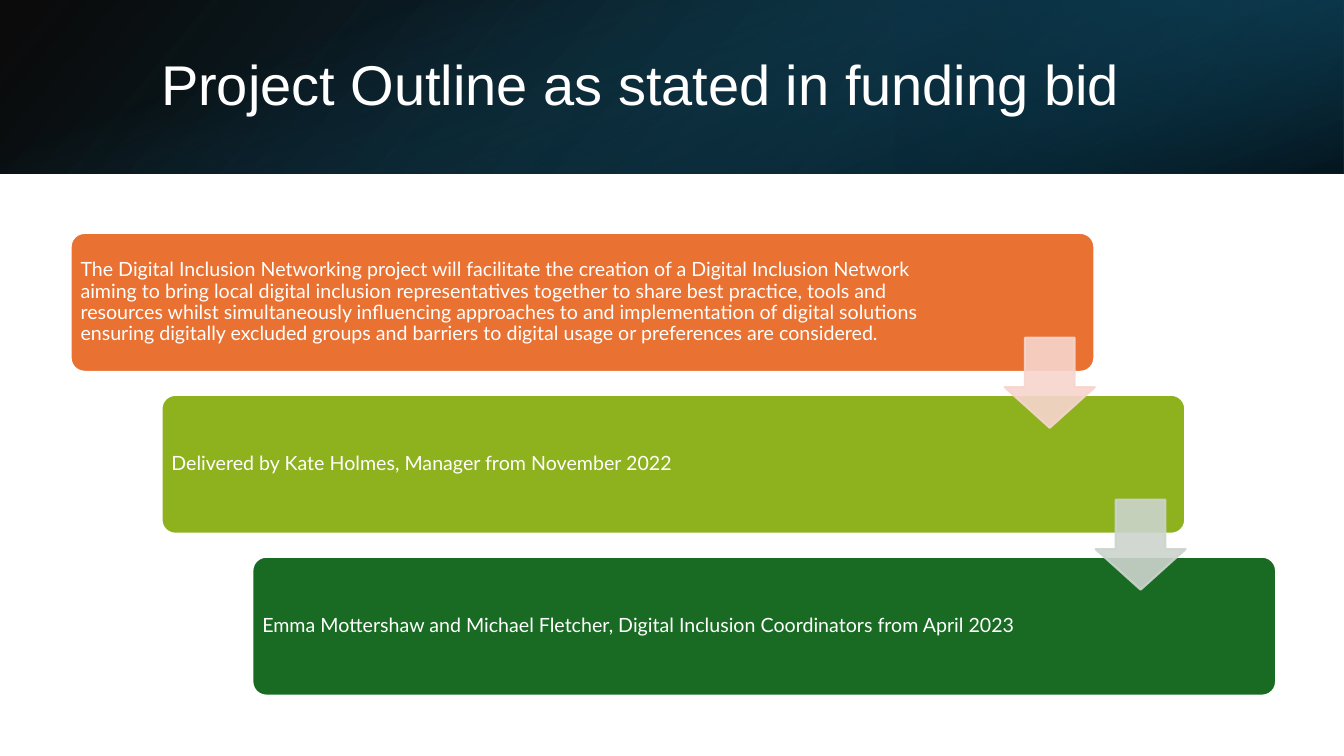
from pptx import Presentation
from pptx.dml.color import RGBColor
from pptx.enum.shapes import MSO_SHAPE
from pptx.enum.text import MSO_ANCHOR
from pptx.oxml.ns import qn
from pptx.oxml.xmlchemy import OxmlElement
from pptx.util import Cm, Pt

SLIDE_WIDTH, SLIDE_HEIGHT = 33.87, 19.05
BAND_HEIGHT = 4.37
CARD_LEFT, CARD_TOP = 1.78, 5.87
CARD_WIDTH, CARD_HEIGHT = 25.8, 3.5
STEP_X, STEP_Y = 2.29, 4.08
ARROW_LEFT, ARROW_TOP, ARROW_SIZE = 25.32, 8.51, 2.27

# Text, fill colour and text width of each card
CARDS = [
    ("The Digital Inclusion Networking project will facilitate the creation of a "
     "Digital Inclusion Network aiming to bring local digital inclusion "
     "representatives together to share best practice, tools and resources whilst "
     "simultaneously influencing approaches to and implementation of digital "
     "solutions ensuring digitally excluded groups and barriers to digital usage or "
     "preferences are considered.", "E97132", 22.02),
    ("Delivered by Kate Holmes, Manager from November 2022", "8EB21E", 21.06),
    ("Emma Mottershaw and Michael Fletcher, Digital Inclusion Coordinators "
     "from April 2023", "196B24", 21.06),
]
ARROW_COLOURS = ["F7D5CE", "CCD4CD"]


def colour(value):
    return RGBColor.from_string(value)


def set_opacity(shape, percentages):
    """Give the shape's colours, in document order, these opacities."""
    colours = list(shape._element.spPr.iter(qn("a:srgbClr")))
    for element, percentage in zip(colours, percentages):
        alpha = OxmlElement("a:alpha")
        alpha.set("val", str(percentage * 1000))
        element.append(alpha)


def add_plain_shape(slide, kind, left, top, width, height):
    shape = slide.shapes.add_shape(kind, Cm(left), Cm(top), Cm(width), Cm(height))
    shape.shadow.inherit = False
    return shape


def add_gradient(slide, box, stops, angle, rotation=0, flipped=False):
    """Stops are (position, colour, opacity); the angle runs clockwise."""
    shape = add_plain_shape(slide, MSO_SHAPE.RECTANGLE, *box)
    shape.line.fill.background()
    shape.rotation = rotation
    if flipped:
        shape._element.spPr.get_or_add_xfrm().set("flipH", "1")
    shape.fill.gradient()
    shape.fill.gradient_angle = 360 - angle
    for stop, (position, value, _) in zip(shape.fill.gradient_stops, stops):
        stop.position = position
        stop.color.rgb = colour(value)
    set_opacity(shape, [opacity for _, _, opacity in stops])


def add_solid(slide, kind, box, value, adjustments):
    shape = add_plain_shape(slide, kind, *box)
    shape.fill.solid()
    shape.fill.fore_color.rgb = colour(value)
    shape.line.width = Pt(1.5)
    for index, adjustment in enumerate(adjustments):
        shape.adjustments[index] = adjustment
    return shape


def add_text(slide, box, text, font, size, line_spacing, inset=None):
    left, top, width, height = box
    frame = slide.shapes.add_textbox(
        Cm(left), Cm(top), Cm(width), Cm(height)).text_frame
    frame.word_wrap = True
    frame.vertical_anchor = MSO_ANCHOR.MIDDLE
    if inset is not None:
        frame.margin_left = frame.margin_right = Cm(inset)
        frame.margin_top = frame.margin_bottom = Cm(inset)
    paragraph = frame.paragraphs[0]
    paragraph.line_spacing = line_spacing
    run = paragraph.add_run()
    run.text = text
    run.font.name = font
    run.font.size = Pt(size)
    run.font.color.rgb = colour("FFFFFF")


def add_header(slide):
    add_gradient(slide, (0, 0, SLIDE_WIDTH, BAND_HEIGHT),
                 [(0, "000000", 96), (1, "104862", 100)], 140, flipped=True)
    add_gradient(slide, (SLIDE_WIDTH * 2 / 3, 0, SLIDE_WIDTH / 3, BAND_HEIGHT),
                 [(0.19, "0B3041", 68), (1, "156082", 79)], 320, 180, True)
    # Turned by a quarter, this tall shape covers the band exactly
    offset = (SLIDE_WIDTH - BAND_HEIGHT) / 2
    add_gradient(slide, (offset, -offset, BAND_HEIGHT, SLIDE_WIDTH),
                 [(0.23, "156082", 0), (0.99, "000000", 74)], 340, 90)
    add_text(slide, (3.81, 0.97, 27.89, 2.44),
             "Project Outline as stated in funding bid", "Arial", 40, 0.9)


def add_card(slide, index, text, value, text_width):
    left, top = CARD_LEFT + index * STEP_X, CARD_TOP + index * STEP_Y
    card = add_solid(slide, MSO_SHAPE.ROUNDED_RECTANGLE,
                     (left, top, CARD_WIDTH, CARD_HEIGHT), value, [0.1])
    card.line.color.rgb = colour("FFFFFF")
    add_text(slide, (left + 0.1, top + 0.1, text_width, CARD_HEIGHT - 0.2),
             text, "Lato", 14, 0.9, 0.15)


def add_arrow(slide, index, value):
    box = (ARROW_LEFT + index * STEP_X, ARROW_TOP + index * STEP_Y,
           ARROW_SIZE, ARROW_SIZE)
    arrow = add_solid(slide, MSO_SHAPE.DOWN_ARROW, box, value, [0.55, 0.45])
    arrow.line.color.rgb = colour(value)
    set_opacity(arrow, [90, 90])


def main():
    presentation = Presentation()
    presentation.slide_width = Cm(SLIDE_WIDTH)
    presentation.slide_height = Cm(SLIDE_HEIGHT)
    slide = presentation.slides.add_slide(presentation.slide_layouts[6])
    add_header(slide)
    for index, card in enumerate(CARDS):
        add_card(slide, index, *card)
    for index, value in enumerate(ARROW_COLOURS):
        add_arrow(slide, index, value)
    presentation.save("out.pptx")


if __name__ == "__main__":
    main()
